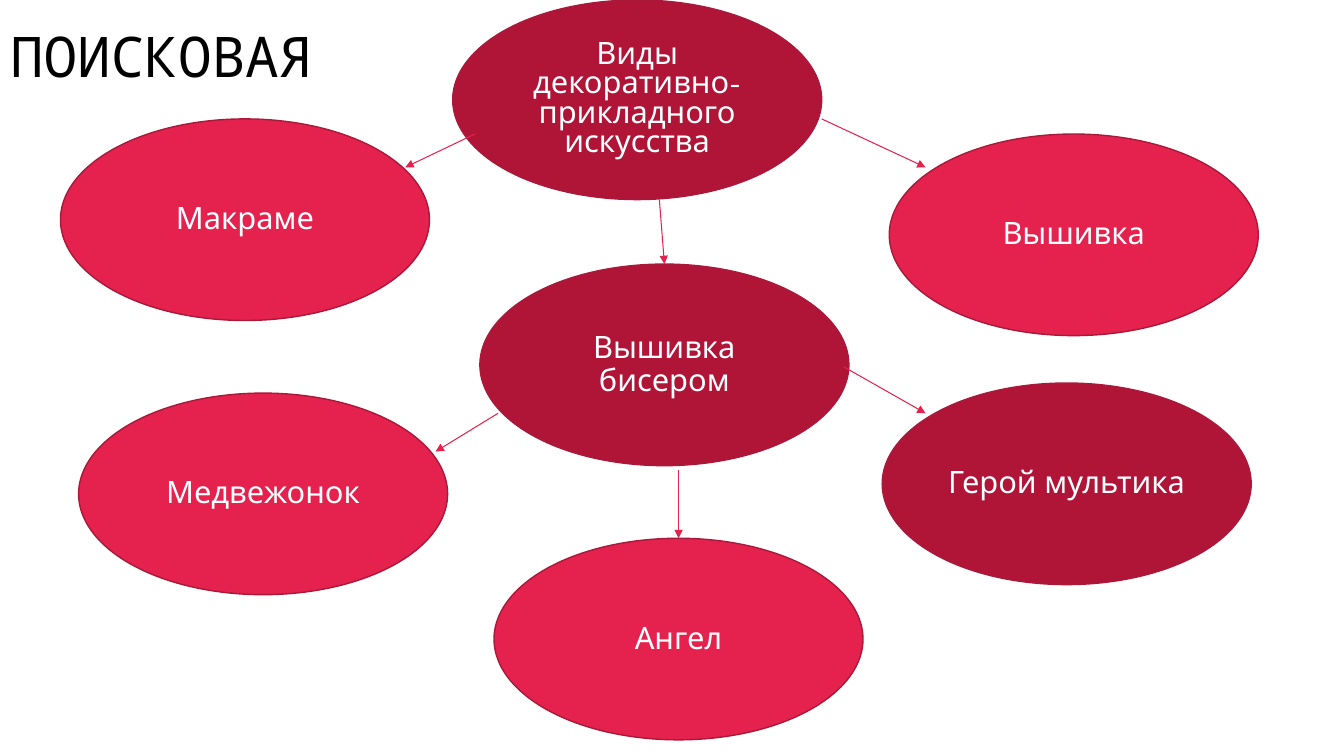
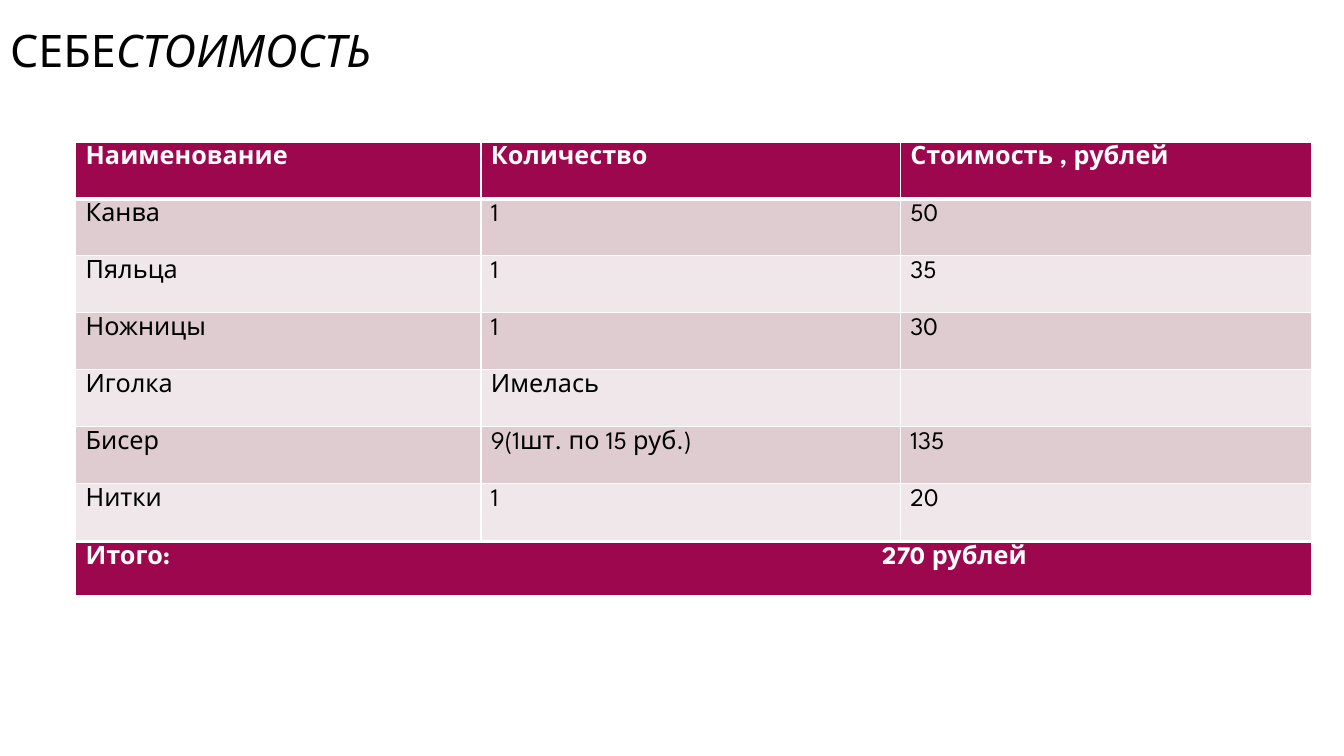
from dataclasses import dataclass

from lxml import etree
from pptx import Presentation
from pptx.dml.color import RGBColor
from pptx.enum.shapes import MSO_CONNECTOR, MSO_SHAPE
from pptx.enum.text import MSO_ANCHOR, MSO_AUTO_SIZE, PP_ALIGN
from pptx.oxml.ns import qn
from pptx.util import Emu, Pt

OVAL, LINE = MSO_SHAPE.OVAL, MSO_CONNECTOR.STRAIGHT
MID, NOFIT = MSO_ANCHOR.MIDDLE, MSO_AUTO_SIZE.NONE
LEFT, CENTER, FULL = PP_ALIGN.LEFT, PP_ALIGN.CENTER, PP_ALIGN.JUSTIFY
TITLE_ONLY = 5
TOP = 0


@dataclass(frozen=True)
class Theme:
    font: str = "League Spartan"
    mono: str = "Noto Sans Mono"
    ink: str = "000000"
    white: str = "FFFFFF"
    dark: str = "B01538"
    pink: str = "E5224E"
    edge: str = "A9193A"
    head: str = "9D074E"
    bands: tuple = ("DFCCD0", "EFE7E9")
    big: int = 40
    mid: int = 32
    node: int = 22
    cell: int = 18


T = Theme()

# Content: lengths in px, 100 to the inch
SIZE = (1333, 750)
OVAL_W, OVAL_H = 366, 200

# key: (text, left, top, height, fill, line spacing)
NODES = {
    "kinds": ("Виды декоративно-прикладного искусства", 449, 0, 198, T.dark, 0.8),
    "knots": ("Макраме", 60, 118, OVAL_H, T.pink, 0.9),
    "sewing": ("Вышивка", 882, 133, OVAL_H, T.pink, 0.9),
    "beads": ("Вышивка бисером", 476, 262, OVAL_H, T.dark, 0.9),
    "bear": ("Медвежонок", 78, 390, OVAL_H, T.pink, 0.9),
    "angel": ("Ангел", 490, 534, OVAL_H, T.pink, 0.9),
    "hero": ("Герой мультика", 875, 380, OVAL_H, T.dark, 0.9),
}
# (from x, from y, to x, to y, node joined at its top)
ARROWS = [
    (471, 133, 402, 166, None),
    (654, 198, 659, 262, "beads"),
    (815, 118, 918, 166, None),
    (673, 466, 673, 534, "angel"),
    (494, 410, 432, 448, None),
    (837, 364, 918, 410, None),
]

COSTS = [
    ("Наименование", "Количество", "Стоимость , рублей"),
    ("Канва", "1", "50"),
    ("Пяльца", "1", "35"),
    ("Ножницы", "1", "30"),
    ("Иголка", "Имелась", ""),
    ("Бисер", "9(1шт. по 15 руб.)", "135"),
    ("Нитки", "1", "20"),
]
TOTAL = ("Итого:", "270 рублей")
COLS = (402, 416, 408)
TABLE_X, COST_Y, COST_H = 75, 141, 395
TOTAL_Y, TOTAL_H, TOTAL_TAB = 538, 54, 790


def px(n):
    return Emu(n * 9144)


def rgb(code):
    return RGBColor.from_string(code)


def add_run(para, text, size, color, font=T.font, bold=False, italic=False):
    run = para.add_run()
    run.text = text
    face = run.font
    face.name, face.size = font, Pt(size)
    face.bold, face.italic = bold, italic
    face.color.rgb = rgb(color)


def new_slide(deck, wide, high, runs, size, font, align):
    """Add a slide; runs are (text, italic) pairs of its title."""
    slide = deck.slides.add_slide(deck.slide_layouts[TITLE_ONLY])
    title = slide.shapes.title
    title.left, title.top, title.width, title.height = 0, 0, px(wide), px(high)
    frame = title.text_frame
    frame.auto_size, frame.vertical_anchor = NOFIT, MID
    para = frame.paragraphs[0]
    para.alignment, para.line_spacing = align, 0.9
    for text, italic in runs:
        add_run(para, text, size, T.ink, font, italic=italic)
    return slide


def add_node(slide, text, x, y, high, fill, space):
    node = slide.shapes.add_shape(OVAL, px(x), px(y), px(OVAL_W), px(high))
    node.shadow.inherit = False
    node.fill.solid()
    node.fill.fore_color.rgb = rgb(fill)
    node.line.color.rgb = rgb(T.edge)
    node.line.width = Pt(1)
    frame = node.text_frame
    frame.word_wrap, frame.vertical_anchor = True, MID
    para = frame.paragraphs[0]
    para.alignment, para.line_spacing = CENTER, space
    add_run(para, text, T.node, T.white)
    return node


def add_arrow(slide, x1, y1, x2, y2, goal):
    arrow = slide.shapes.add_connector(LINE, px(x1), px(y1), px(x2), px(y2))
    arrow.line.color.rgb = rgb(T.pink)
    arrow.line.width = Pt(0.75)
    etree.SubElement(arrow.line._get_or_add_ln(), qn("a:tailEnd"), type="triangle")
    etree.SubElement(arrow._element.spPr, qn("a:effectLst"))
    if goal is not None:
        arrow.end_connect(goal, TOP)


def style_cell(cell, fill, above=1, below=1):
    """Fill a cell and give it white borders, widths in points."""
    cell.fill.solid()
    cell.fill.fore_color.rgb = rgb(fill)
    props = cell._tc.get_or_add_tcPr()
    sides = (("L", 1), ("R", 1), ("T", above), ("B", below))
    for at, (side, width) in enumerate(sides):
        edge = etree.Element(qn(f"a:ln{side}"), w=str(Pt(width)))
        paint = etree.SubElement(edge, qn("a:solidFill"))
        etree.SubElement(paint, qn("a:srgbClr"), val=T.white)
        props.insert(at, edge)


def add_grid(slide, rows, cols, y, high):
    grid = slide.shapes.add_table(
        rows, len(cols), px(TABLE_X), px(y), px(sum(cols)), px(high)).table
    grid.first_row = grid.horz_banding = False
    for col, wide in zip(grid.columns, cols):
        col.width = px(wide)
    return grid


def build_search(deck):
    slide = new_slide(deck, 402, 118, [("ПОИСКОВАЯ", False)], T.big, T.mono, LEFT)
    nodes = {key: add_node(slide, *node) for key, node in NODES.items()}
    for *ends, goal in ARROWS:
        add_arrow(slide, *ends, nodes.get(goal))


def build_costs(deck):
    runs = [("СЕБЕ", False), ("СТОИМОСТЬ", True)]
    slide = new_slide(deck, SIZE[0], 105, runs, T.mid, T.font, FULL)

    # Cost rows
    grid = add_grid(slide, len(COSTS), COLS, COST_Y, COST_H)
    for r, row in enumerate(COSTS):
        head = r == 0
        fill = T.head if head else T.bands[(r - 1) % 2]
        for c, text in enumerate(row):
            cell = grid.cell(r, c)
            style_cell(cell, fill, 3 if r == 1 else 1, 3 if head else 1)
            if text:
                add_run(cell.text_frame.paragraphs[0], text, T.cell,
                        T.white if head else T.ink, bold=head)

    # Total row, its sum set at a tab stop
    cell = add_grid(slide, 1, (sum(COLS),), TOTAL_Y, TOTAL_H).cell(0, 0)
    style_cell(cell, T.head, below=3)
    para = cell.text_frame.paragraphs[0]
    tabs = etree.SubElement(para._p.get_or_add_pPr(), qn("a:tabLst"))
    etree.SubElement(tabs, qn("a:tab"), pos=str(px(TOTAL_TAB)), algn="l")
    add_run(para, "\t".join(TOTAL), T.cell, T.white, bold=True)


def main():
    deck = Presentation()
    deck.slide_width, deck.slide_height = map(px, SIZE)
    build_search(deck)
    build_costs(deck)
    deck.save("out.pptx")


if __name__ == "__main__":
    main()
